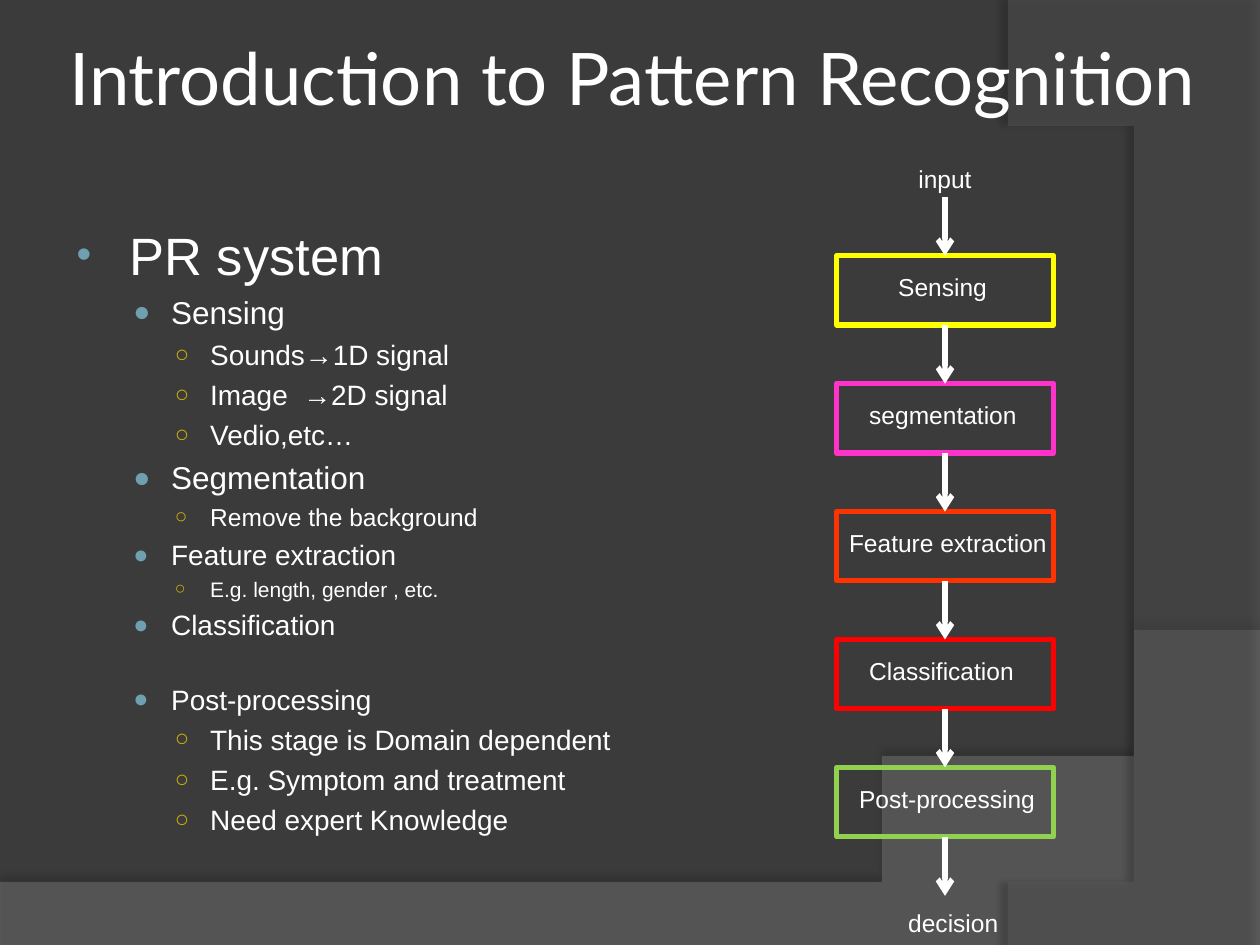
from dataclasses import dataclass

from lxml.etree import SubElement
from pptx import Presentation
from pptx.dml.color import RGBColor
from pptx.enum.shapes import MSO_CONNECTOR, MSO_SHAPE
from pptx.enum.text import MSO_ANCHOR, MSO_AUTO_SIZE, PP_ALIGN
from pptx.oxml.ns import qn
from pptx.util import Inches, Pt


@dataclass(frozen=True)
class Theme:
    background: str = "3B3B3B"
    wave: str = "7F7F7F"
    arc: str = "5E5E5E"
    shadow: str = "000000"
    text: str = "FFFFFF"
    bullet: str = "6EA0B0"
    sub_bullet: str = "CCAF0A"
    title_font: str = "Lato"
    body_font: str = "Arial"
    title_size: float = 41.4
    label_size: int = 14
    line_width: int = 3


THEME = Theme()

LEVELS = [
    ("•", THEME.bullet, 80, 0.46, -0.42),
    ("●", THEME.bullet, 90, 0.79, -0.3),
    ("○", THEME.sub_bullet, 85, 1.1, -0.28),
]

OUTLINE = [
    (0, 30, "PR system"),
    (1, 18, "Sensing"),
    (2, 16, "Sounds→1D signal"),
    (2, 16, "Image  →2D signal"),
    (2, 16, "Vedio,etc…"),
    (1, 18, "Segmentation"),
    (2, 14, "Remove the background"),
    (1, 16, "Feature extraction"),
    (2, 12, "E.g. length, gender , etc."),
    (1, 16, "Classification"),
    (1, 16, "Post-processing"),
    (2, 16, "This stage is Domain dependent"),
    (2, 16, "E.g. Symptom and treatment"),
    (2, 16, "Need expert Knowledge"),
]
LAST_STAGE = "Post-processing"
LAST_STAGE_GAP = 23.3
SPACING_RATIO = 0.23

STAGES = [
    ("Sensing", "FFFF00", 7.03, 1.41),
    ("segmentation", "FF33CC", 6.8, 1.41),
    ("Feature extraction", "FF3300", 6.64, 2.73),
    ("Classification", "FF0000", 6.8, 1.41),
    ("Post-processing", "92D050", 6.72, 2.27),
]
STAGE_LEFT, STAGE_TOP, STAGE_WIDTH, STAGE_HEIGHT = 6.64, 2.03, 1.72, 0.55
STAGE_PITCH = 4.06 / 4
ARROW_LENGTH = 0.47


def color(value):
    return RGBColor.from_string(value)


def format_font(font, name, size):
    font.name = name
    font.size = Pt(size)
    font.color.rgb = color(THEME.text)


def curve(start, first, second, end, steps=60):
    points = []
    for step in range(steps + 1):
        t = step / steps
        weights = ((1 - t) ** 3, 3 * t * (1 - t) ** 2, 3 * t * t * (1 - t), t ** 3)
        points.append(tuple(
            sum(weight * value for weight, value in zip(weights, values))
            for values in zip(start, first, second, end)
        ))
    return points


def add_backdrop(slide, points, fill, opacity, shadow_opacity, distance, direction):
    builder = slide.shapes.build_freeform(*points[0], scale=Inches(1))
    builder.add_line_segments(points[1:])
    shape = builder.convert_to_shape()
    shape.fill.solid()
    shape.fill.fore_color.rgb = color(fill)
    shape.line.fill.background()
    properties = shape.element.spPr
    fill_color = properties.find(qn("a:solidFill")).find(qn("a:srgbClr"))
    SubElement(fill_color, qn("a:alpha"), val=str(opacity * 1000))
    effects = SubElement(properties, qn("a:effectLst"))
    shadow = SubElement(
        effects, qn("a:outerShdw"), blurRad=str(Pt(4)), dist=str(Pt(distance)),
        dir=str(direction * 60000), algn="ctr", rotWithShape="0",
    )
    shadow_color = SubElement(shadow, qn("a:srgbClr"), val=THEME.shadow)
    SubElement(shadow_color, qn("a:alpha"), val=str(shadow_opacity * 1000))


def add_title(slide, text):
    title = slide.shapes.title
    title.element.getparent().append(title.element)
    title.left, title.top = Inches(0.5), Inches(0.26)
    title.width, title.height = Inches(11.14), Inches(1.25)
    frame = title.text_frame
    frame.text = text
    frame.auto_size = MSO_AUTO_SIZE.NONE
    frame.vertical_anchor = MSO_ANCHOR.TOP
    frame.margin_left = frame.margin_right = Inches(0.05)
    frame.margin_top = 0
    paragraph = frame.paragraphs[0]
    paragraph.alignment = PP_ALIGN.LEFT
    format_font(paragraph.font, THEME.title_font, THEME.title_size)


def add_text_box(slide, left, top, width, height):
    frame = slide.shapes.add_textbox(
        Inches(left), Inches(top), Inches(width), Inches(height)
    ).text_frame
    frame.word_wrap = True
    return frame


def add_label(slide, text, left, top, width=1.41):
    paragraph = add_text_box(slide, left, top, width, 0.34).paragraphs[0]
    paragraph.text = text
    format_font(paragraph.font, THEME.body_font, THEME.label_size)


def set_bullet(paragraph, level):
    character, bullet_color, percent, margin, indent = LEVELS[level]
    paragraph.level = level
    properties = paragraph._p.get_or_add_pPr()
    properties.set("marL", str(Inches(margin)))
    properties.set("indent", str(Inches(indent)))
    holder = SubElement(properties, qn("a:buClr"))
    SubElement(holder, qn("a:srgbClr"), val=bullet_color)
    SubElement(properties, qn("a:buSzPct"), val=str(percent * 1000))
    SubElement(properties, qn("a:buFont"), typeface=THEME.body_font)
    SubElement(properties, qn("a:buChar"), char=character)


def add_outline(slide):
    frame = add_text_box(slide, 0.47, 1.72, 8.75, 5.39)
    for index, (level, size, text) in enumerate(OUTLINE):
        paragraph = frame.add_paragraph() if index else frame.paragraphs[0]
        paragraph.text = text
        gap = LAST_STAGE_GAP if text == LAST_STAGE else size * SPACING_RATIO
        paragraph.space_before = Pt(gap)
        set_bullet(paragraph, level)
        format_font(paragraph.font, THEME.body_font, size)


def add_stage(slide, top, text, outline, label_left, label_width):
    box = slide.shapes.add_shape(
        MSO_SHAPE.RECTANGLE, Inches(STAGE_LEFT), Inches(top),
        Inches(STAGE_WIDTH), Inches(STAGE_HEIGHT),
    )
    box.shadow.inherit = False
    box.fill.background()
    box.line.color.rgb = color(outline)
    box.line.width = Pt(THEME.line_width)
    add_label(slide, text, label_left, top + 0.08, label_width)
    return box


def add_arrow(slide, top, source=None, target=None):
    center = Inches(STAGE_LEFT + STAGE_WIDTH / 2)
    arrow = slide.shapes.add_connector(
        MSO_CONNECTOR.STRAIGHT, center, Inches(top), center, Inches(top + ARROW_LENGTH)
    )
    if source is not None:
        arrow.begin_connect(source, 2)
    if target is not None:
        arrow.end_connect(target, 0)
    arrow.line.color.rgb = color(THEME.text)
    arrow.line.width = Pt(THEME.line_width)
    SubElement(arrow.line._get_or_add_ln(), qn("a:tailEnd"), type="arrow")
    SubElement(arrow.element.spPr, qn("a:effectLst"))


def add_flow(slide):
    add_label(slide, "input", 7.19, 1.25)
    previous = None
    for index, (text, outline, left, width) in enumerate(STAGES):
        top = STAGE_TOP + index * STAGE_PITCH
        box = add_stage(slide, top, text, outline, left, width)
        add_arrow(slide, top - ARROW_LENGTH, previous, box)
        previous = box
    add_arrow(slide, top + STAGE_HEIGHT, previous)
    add_label(slide, "decision", 7.11, 7.16)


def main():
    presentation = Presentation()
    presentation.slide_width, presentation.slide_height = Inches(10), Inches(7.5)
    slide = presentation.slides.add_slide(presentation.slide_layouts[5])
    slide.background.fill.solid()
    slide.background.fill.fore_color.rgb = color(THEME.background)
    wave = curve((10, 5.2), (5.59, 7.29), (3.91, 7.19), (0, 7.05))
    add_backdrop(slide, [(0, 7.51), (10, 7.51)] + wave, THEME.wave, 45, 35, 3.5, 270)
    arc = curve((8.21, 7.5), (9.35, 6.19), (10.18, 3), (8, 0))
    add_backdrop(slide, [(10, 0.02), (10, 7.5)] + arc, THEME.arc, 40, 45, 4, 180)
    add_title(slide, "Introduction to Pattern Recognition")
    add_outline(slide)
    add_flow(slide)
    presentation.save("out.pptx")


if __name__ == "__main__":
    main()
